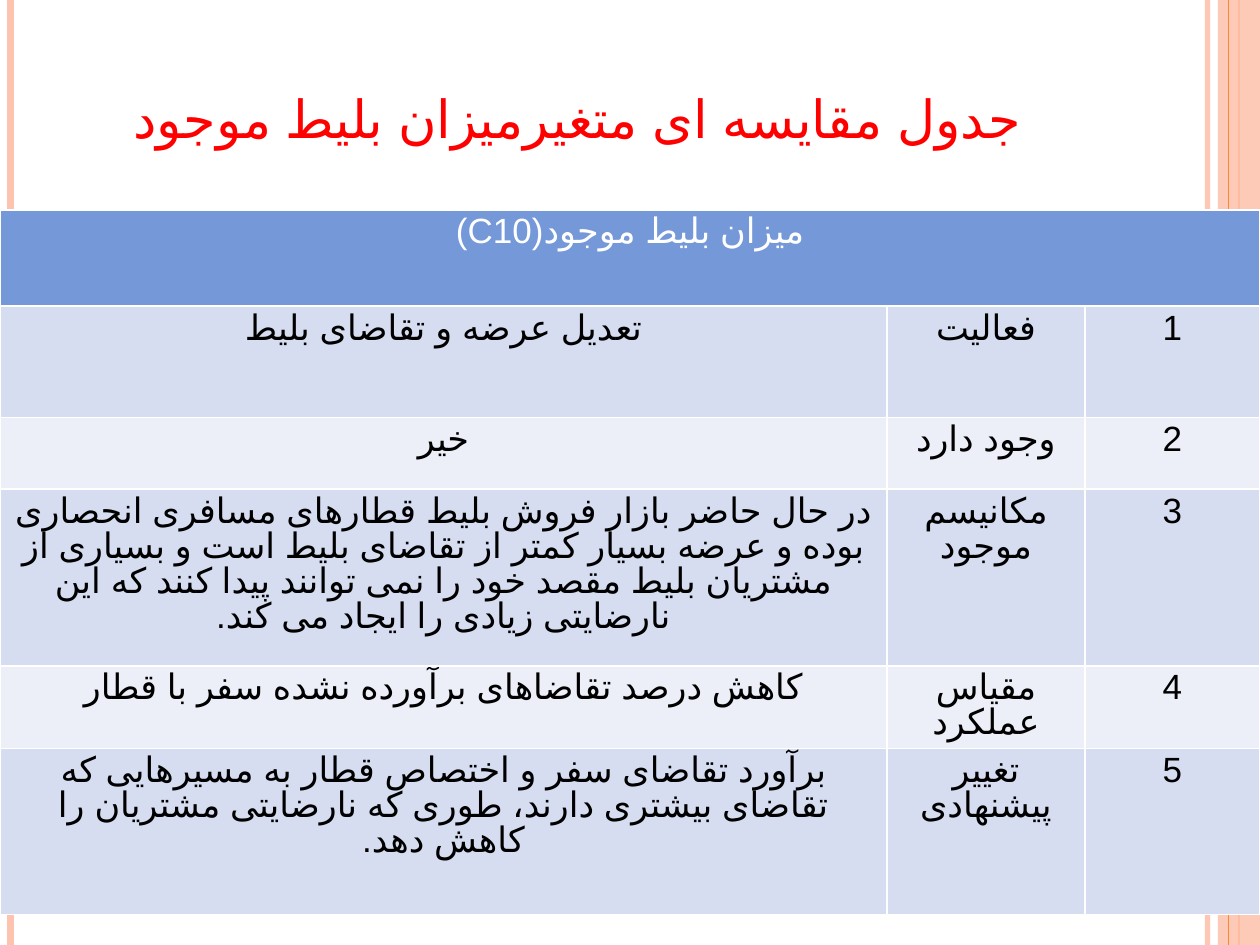
import pptx
import pptx.dml.color
import pptx.enum.shapes
import pptx.enum.text
import pptx.oxml
import pptx.oxml.ns
import pptx.util
from lxml import etree

Pt = pptx.util.Pt
qn = pptx.oxml.ns.qn
NS = 'xmlns:a="http://schemas.openxmlformats.org/drawingml/2006/main"'
PEACH, ORANGE, WHITE = "FEC3AE", "FE8637", "FFFFFF"
HEADER = "میزان بلیط موجود(C10)"
ROWS = [
    ("تعدیل عرضه و تقاضای بلیط", "فعالیت"),
    ("خیر", "وجود دارد"),
    ("در حال حاضر بازار فروش بلیط قطارهای مسافری انحصاری بوده و عرضه بسیار کمتر از تقاضای بلیط است و بسیاری از مشتریان بلیط مقصد خود را نمی توانند پیدا کنند که این نارضایتی زیادی را ایجاد می کند.", "مکانیسم موجود"),
    ("کاهش درصد تقاضاهای برآورده نشده سفر با قطار", "مقیاس عملکرد"),
    ("برآورد تقاضای سفر و اختصاص قطار به مسیرهایی که تقاضای بیشتری دارند، طوری که نارضایتی مشتریان را کاهش دهد.", "تغییر پیشنهادی"),
]
COLUMN_WIDTHS = [506.8, 113.2, 100]
ROW_HEIGHTS = [55, 63.5, 41, 101, 47, 95]


def rgb(value):
    return pptx.dml.color.RGBColor.from_string(value)


def set_opacity(shape, percent):
    color = next(shape._element.spPr.iter(qn("a:srgbClr")))
    etree.SubElement(color, qn("a:alpha")).set("val", str(percent * 1000))


def write_rtl(tf, text, size, font, color):
    tf.text = text
    p = tf.paragraphs[0]
    p.alignment = pptx.enum.text.PP_ALIGN.CENTER
    p._p.get_or_add_pPr().set("rtl", "1")
    r = p.runs[0]
    r.font.size = Pt(size)
    r.font.name = font
    r.font.color.rgb = rgb(color)
    rPr = r._r.get_or_add_rPr()
    rPr.set("lang", "fa-IR")
    etree.SubElement(rPr, qn("a:cs")).set("typeface", "Arial")
    return p


def add_rule(s, x, top, height, color, width):
    line = s.shapes.add_connector(
        pptx.enum.shapes.MSO_CONNECTOR.STRAIGHT, Pt(x), Pt(top), Pt(x), Pt(top + height))
    line.line.color.rgb = rgb(color)
    line.line.width = Pt(width)
    etree.SubElement(line._element.spPr, qn("a:effectLst"))
    return line


def add_side_stripes(s, left, top, width, height):
    right = left + width
    set_opacity(add_rule(s, right - 30, top, height, PEACH, 3), 93)
    add_rule(s, left + 6, top, height, PEACH, 4.5)
    add_rule(s, right - 12, top, height, ORANGE, 1.5)
    band = s.shapes.add_shape(
        pptx.enum.shapes.MSO_SHAPE.RECTANGLE, Pt(right - 24), Pt(top), Pt(24), Pt(height))
    band.shadow.inherit = False
    band.fill.solid()
    band.fill.fore_color.rgb = rgb(PEACH)
    band.line.fill.background()
    set_opacity(band, 87)
    add_rule(s, right - 18, top, height, ORANGE, 0.75)


def add_title(s, left, top, width, height):
    tf = s.shapes.add_textbox(Pt(left), Pt(top), Pt(width), Pt(height)).text_frame
    tf.word_wrap = True
    tf.vertical_anchor = pptx.enum.text.MSO_ANCHOR.BOTTOM
    write_rtl(tf, "جدول مقایسه ای متغیرمیزان بلیط موجود", 30, "TeX Gyre Schola", "FF0000")


def style_cell(cell, text, fill, color):
    p = write_rtl(cell.text_frame, text, 20, "Arial", color)
    p.line_spacing = Pt(20)
    tcPr = cell._tc.get_or_add_tcPr()
    for side in "LRTB":
        tcPr.append(pptx.oxml.parse_xml(
            f'<a:ln{side} {NS} w="12700"><a:solidFill><a:srgbClr val="{WHITE}"/>'
            f'</a:solidFill></a:ln{side}>'))
    cell.fill.solid()
    cell.fill.fore_color.rgb = rgb(fill)


def add_comparison_table(s, left, top, width, height):
    table = s.shapes.add_table(
        len(ROW_HEIGHTS), len(COLUMN_WIDTHS), Pt(left), Pt(top), Pt(width), Pt(height)).table
    for column, w in zip(table.columns, COLUMN_WIDTHS):
        column.width = Pt(w)
    for row, h in zip(table.rows, ROW_HEIGHTS):
        row.height = Pt(h)
    table.cell(0, 0).merge(table.cell(0, 2))
    style_cell(table.cell(0, 0), HEADER, "7598D9", WHITE)
    for number, (detail, label) in enumerate(ROWS, 1):
        fill = "D6DDF1" if number % 2 else "ECEFF8"
        for col, text in enumerate((detail, label, str(number))):
            style_cell(table.cell(number, col), text, fill, "000000")


def main():
    prs = pptx.Presentation()
    prs.slide_width, prs.slide_height = Pt(720), Pt(540)
    s = prs.slides.add_slide(prs.slide_layouts[6])
    add_side_stripes(s, 0, 0, 720, 540)
    add_title(s, 36, 21.6, 588, 67)
    add_comparison_table(s, 0, 120, sum(COLUMN_WIDTHS), sum(ROW_HEIGHTS))
    prs.save("out.pptx")


if __name__ == "__main__":
    main()
